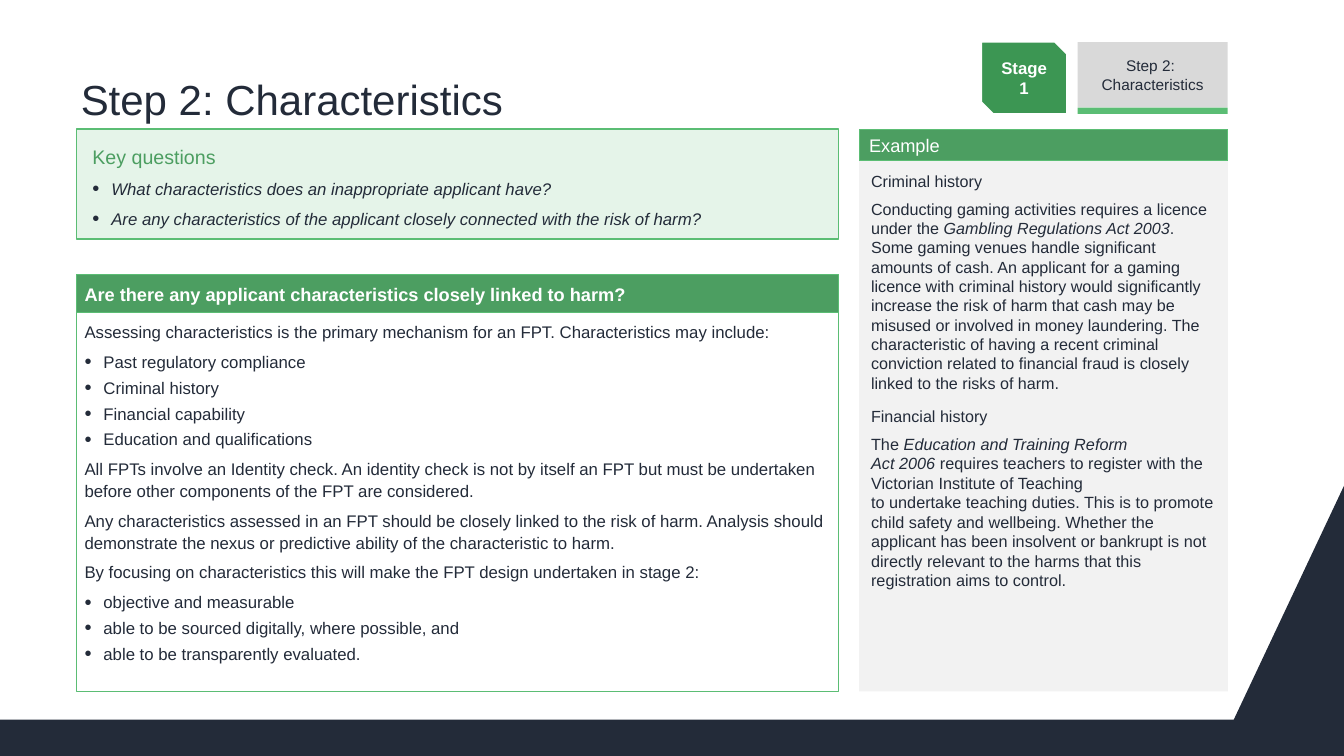
from dataclasses import dataclass

import pptx
import pptx.dml.color
import pptx.enum.shapes
import pptx.enum.text
import pptx.util
from lxml import etree
from pptx.oxml.ns import qn

Pt = pptx.util.Pt
SHAPE = pptx.enum.shapes.MSO_SHAPE
ANCHOR = pptx.enum.text.MSO_ANCHOR
ALIGN = pptx.enum.text.PP_ALIGN

NAVY, WHITE = "232B39", "FFFFFF"
GREEN, BRIGHT_GREEN, STAGE_GREEN, PALE_GREEN = "4C9E61", "5BBD74", "3C9653", "E5F4E9"
GREY, PALE_GREY = "D9D9D9", "F2F2F2"

PAGE_WIDTH, PAGE_HEIGHT = 960, 540
LEFT, MAIN_WIDTH = 54.7, 544.3
SIDE_LEFT, SIDE_WIDTH = 613.7, 263.3
STEP_LEFT, STEP_WIDTH = 769.7, 107.3
PANEL_TOP, PANEL_BOTTOM = 92.2, 493.9
BULLET_INDENT = 13.5


@dataclass
class Span:
    text: str
    italic: bool = False


@dataclass
class Para:
    spans: list[Span]
    size: float = 12
    color: str = NAVY
    bold: bool = False
    before: float = 0
    after: float = 0
    spacing: float = 1.0
    bullet: bool = False
    align: ALIGN = ALIGN.LEFT


@dataclass
class Box:
    left: float
    top: float
    width: float
    height: float
    paras: list[Para]
    fill: str | None = None
    line: str | None = None
    line_width: float = 1
    anchor: ANCHOR = ANCHOR.MIDDLE
    insets: tuple[float, float, float, float] = (7.2, 3.6, 7.2, 3.6)
    kind: SHAPE = SHAPE.RECTANGLE


def rgb(color: str) -> pptx.dml.color.RGBColor:
    return pptx.dml.color.RGBColor.from_string(color)


def plain(text: str, **form) -> Para:
    return Para([Span(text)], **form)


def body(text: str, after: float = 6, **form) -> Para:
    return plain(text, after=after, spacing=1.07, **form)


def write(para, text: str, *, size: float, color: str, bold: bool, italic: bool) -> None:
    """Append text to a paragraph, turning each newline into a line break."""
    for index, piece in enumerate(text.split("\n")):
        if index:
            para.add_line_break()
        run = para.add_run()
        run.text = piece
        run.font.name = "Arial"
        run.font.size = Pt(size)
        run.font.bold = bold
        run.font.italic = italic
        run.font.color.rgb = rgb(color)


def add_bullet(para) -> None:
    properties = para._p.get_or_add_pPr()
    properties.set("marL", str(Pt(BULLET_INDENT)))
    properties.set("indent", str(-Pt(BULLET_INDENT)))
    etree.SubElement(properties, qn("a:buSzPct")).set("val", "120000")
    etree.SubElement(properties, qn("a:buFont")).set("typeface", "Arial")
    etree.SubElement(properties, qn("a:buChar")).set("char", "•")


def fill_text(frame, box: Box) -> None:
    frame.word_wrap = True
    frame.vertical_anchor = box.anchor
    frame.margin_left, frame.margin_top, frame.margin_right, frame.margin_bottom = map(Pt, box.insets)
    for index, item in enumerate(box.paras):
        para = frame.add_paragraph() if index else frame.paragraphs[0]
        para.alignment = item.align
        para.line_spacing = item.spacing
        para.space_before = Pt(item.before)
        para.space_after = Pt(item.after)
        if item.bullet:
            add_bullet(para)
        for span in item.spans:
            write(para, span.text, size=item.size, color=item.color, bold=item.bold, italic=span.italic)


def paint(shape, fill: str, line: str | None, line_width: float) -> None:
    shape.shadow.inherit = False
    shape.fill.solid()
    shape.fill.fore_color.rgb = rgb(fill)
    if line:
        shape.line.color.rgb = rgb(line)
        shape.line.width = Pt(line_width)
    else:
        shape.line.fill.background()


def draw(page, box: Box) -> None:
    place = [Pt(length) for length in (box.left, box.top, box.width, box.height)]
    if box.fill:
        shape = page.shapes.add_shape(box.kind, *place)
        paint(shape, box.fill, box.line, box.line_width)
    else:
        shape = page.shapes.add_textbox(*place)
    if box.paras:
        fill_text(shape.text_frame, box)


def draw_footer(page) -> None:
    band_top = 514
    outline = [(0, band_top), (0, PAGE_HEIGHT), (PAGE_WIDTH, PAGE_HEIGHT), (PAGE_WIDTH, 347)]
    builder = page.shapes.build_freeform(Pt(881.3), Pt(band_top))
    builder.add_line_segments([(Pt(x), Pt(y)) for x, y in outline], close=True)
    paint(builder.convert_to_shape(), NAVY, None, 0)


QUESTIONS = [
    "What characteristics does an inappropriate applicant have?",
    "Are any characteristics of the applicant closely connected with the risk of harm?",
]
INCLUDED = ["Past regulatory compliance", "Criminal history", "Financial capability"]
QUALITIES = [
    "objective and measurable",
    "able to be sourced digitally, where possible, and",
    "able to be transparently evaluated.",
]
ASSESSMENT = [
    body("Assessing characteristics is the primary mechanism for an FPT. Characteristics may include:"),
    *[body(text, after=3, bullet=True) for text in INCLUDED],
    body("Education and qualifications", bullet=True),
    body("All FPTs involve an Identity check. An identity check is not by itself an FPT but must be "
         "undertaken before other components of the FPT are considered."),
    body("Any characteristics assessed in an FPT should be closely linked to the risk of harm. Analysis "
         "should demonstrate the nexus or predictive ability of the characteristic to harm."),
    body("By focusing on characteristics this will make the FPT design undertaken in stage 2:"),
    *[body(text, after=3, bullet=True) for text in QUALITIES],
]
EXAMPLES = [
    plain("Criminal history", size=11.5, before=10),
    Para([
        Span("Conducting gaming activities requires a licence under the "),
        Span("Gambling Regulations Act 2003", italic=True),
        Span(". Some gaming venues handle significant amounts of cash. An applicant for a gaming licence "
             "with criminal history would significantly increase the risk of harm that cash may be misused "
             "or involved in money laundering. The characteristic of having a recent criminal conviction "
             "related to financial fraud is closely linked to the risks of harm."),
    ], size=11.5, before=6),
    plain("Financial history", size=11.5, before=10),
    Para([
        Span("The "),
        Span("Education and Training Reform \nAct 2006 ", italic=True),
        Span("requires teachers to register with the Victorian Institute of Teaching \nto undertake teaching "
             "duties. This is to promote child safety and wellbeing. Whether the applicant has been insolvent "
             "or bankrupt is not directly relevant to the harms that this registration aims to control."),
    ], size=11.6, before=6),
]
KEY_QUESTIONS = [
    body("Key questions", size=14, color=GREEN),
    *[Para([Span(text, italic=True)], after=6, spacing=1.07, bullet=True) for text in QUESTIONS],
]
BOXES = [
    Box(LEFT, 10.8, 823, 81.4, [plain("Step 2: Characteristics", size=30, spacing=0.9)],
        anchor=ANCHOR.BOTTOM, insets=(3, 3.6, 3, 3.6)),
    Box(SIDE_LEFT, 113.8, SIDE_WIDTH, PANEL_BOTTOM - 113.8, EXAMPLES, PALE_GREY,
        anchor=ANCHOR.TOP, insets=(8.5, 8.5, 8.5, 8.5)),
    Box(LEFT, 196, MAIN_WIDTH, 27.3,
        [plain("Are there any applicant characteristics closely linked to harm?",
               size=13, color=WHITE, bold=True, spacing=0.9)],
        GREEN, BRIGHT_GREEN, insets=(5.7, 5.7, 5.7, 2.8)),
    Box(LEFT, 223.3, MAIN_WIDTH, PANEL_BOTTOM - 223.3, ASSESSMENT, WHITE, BRIGHT_GREEN,
        anchor=ANCHOR.TOP, insets=(5.7, 5.7, 5.7, 5.7)),
    Box(700.6, 29.5, 61.9, 52.3, [plain("Stage 1", color=WHITE, bold=True, align=ALIGN.CENTER)],
        STAGE_GREEN, WHITE, 2, kind=SHAPE.SNIP_2_DIAG_RECTANGLE),
    Box(STEP_LEFT, 30.2, STEP_WIDTH, 46.6,
        [plain("Step 2: \nCharacteristics", size=11, align=ALIGN.CENTER)], GREY),
    Box(STEP_LEFT, 76.8, STEP_WIDTH, 4.5, [], BRIGHT_GREEN),
    Box(SIDE_LEFT, PANEL_TOP, SIDE_WIDTH, 22.8, [plain("Example", size=13, color=WHITE)],
        GREEN, BRIGHT_GREEN, 0.75),
    Box(LEFT, PANEL_TOP, MAIN_WIDTH, 78.5, KEY_QUESTIONS, PALE_GREEN, BRIGHT_GREEN,
        insets=(11.3, 8.5, 11.3, 5.7)),
]


def main() -> None:
    deck = pptx.Presentation()
    deck.slide_width, deck.slide_height = Pt(PAGE_WIDTH), Pt(PAGE_HEIGHT)
    page = deck.slides.add_slide(deck.slide_layouts[6])
    draw_footer(page)
    for box in BOXES:
        draw(page, box)
    deck.save("out.pptx")


if __name__ == "__main__":
    main()
